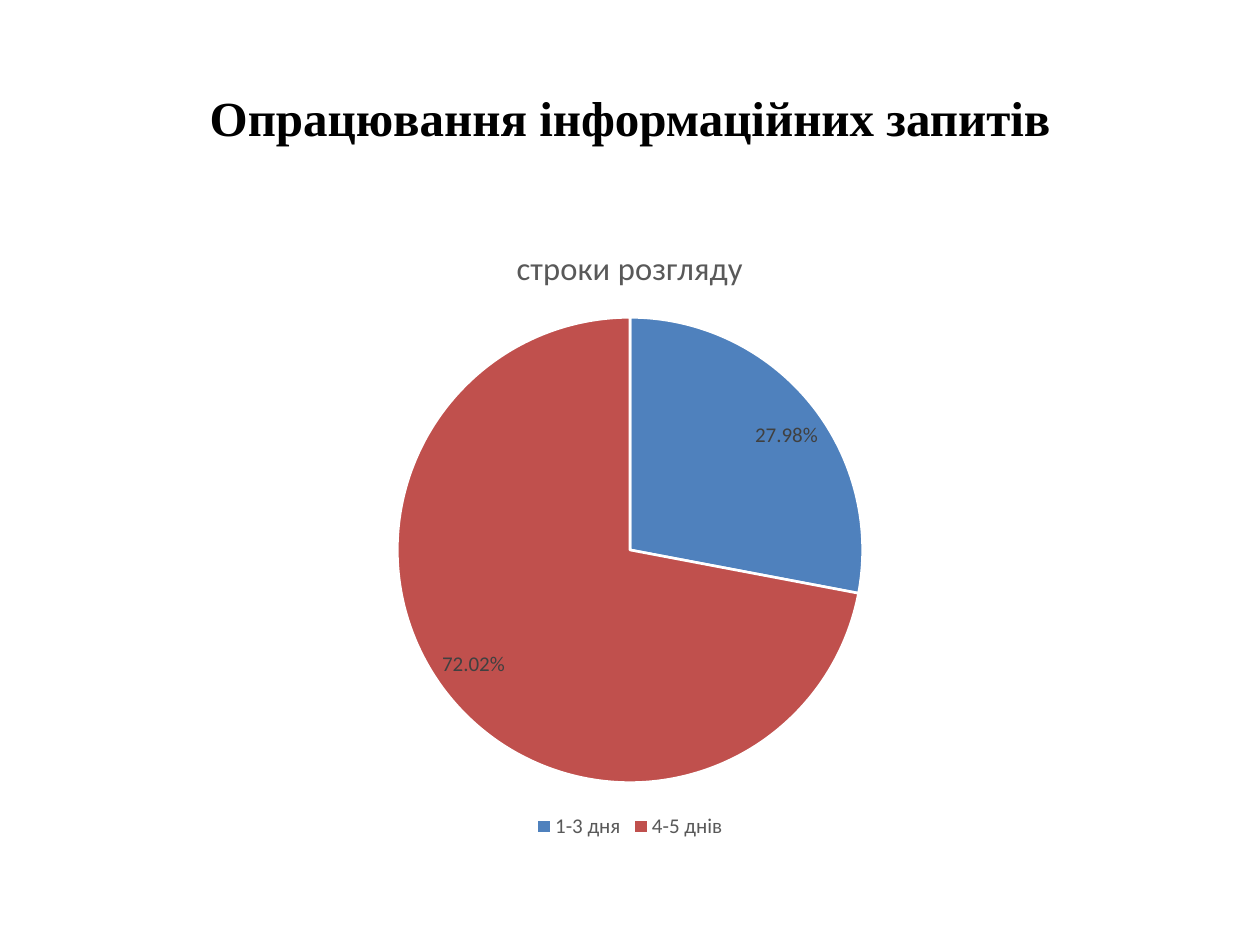
from pptx import Presentation
from pptx import util as u
from pptx.chart.data import CategoryChartData
from pptx.dml.color import RGBColor
from pptx.enum import chart as ch, text

HUES = {"ink": "000000", "grey": "595959", "dark": "404040",
        "blue": "4F81BD", "red": "C0504D", "white": "FFFFFF"}


class Deck:
    def __init__(self):
        self.prs = Presentation()
        self.prs.slide_width = u.Inches(10)
        self.prs.slide_height = u.Inches(7.5)
        self.slide = self.prs.slides.add_slide(self.prs.slide_layouts[5])

    def hue(self, name):
        return RGBColor.from_string(HUES[name])

    def style(self, font, size, hue, face="Calibri", bold=False):
        font.name, font.size, font.bold = face, u.Pt(size), bold
        font.color.rgb = self.hue(hue)

    def title(self, words, *box):
        head = self.slide.shapes.title
        head.left, head.top, head.width, head.height = map(u.Inches, box)
        frame = head.text_frame
        frame.text = words
        frame.vertical_anchor = text.MSO_ANCHOR.MIDDLE
        line = frame.paragraphs[0]
        line.alignment = text.PP_ALIGN.CENTER
        self.style(line.runs[0].font, 28, "ink", "Times New Roman", True)

    def pie(self, name, shares, hues, *box):
        data = CategoryChartData(number_format="0.00%")
        data.categories = list(shares)
        data.add_series(name, list(shares.values()))
        chart = self.slide.shapes.add_chart(
            ch.XL_CHART_TYPE.PIE, *map(u.Inches, box), data).chart
        self.style(chart.font, 10, "ink")

        chart.has_title = True
        chart.chart_title.include_in_layout = False
        frame = chart.chart_title.text_frame
        frame.text = name
        self.style(frame.paragraphs[0].runs[0].font, 18.6, "grey")

        chart.has_legend = True
        chart.legend.position = ch.XL_LEGEND_POSITION.BOTTOM
        chart.legend.include_in_layout = False
        self.style(chart.legend.font, 12, "grey")

        plot = chart.plots[0]
        plot.vary_by_categories = True
        for i, hue in enumerate(hues):
            form = plot.series[0].points[i].format
            form.fill.solid()
            form.fill.fore_color.rgb = self.hue(hue)
            form.line.color.rgb = self.hue("white")
            form.line.width = u.Pt(1.5)

        tags = plot.series[0].data_labels
        tags.show_value = True
        tags.number_format = "0.00%"
        tags.number_format_is_linked = False
        tags.position = ch.XL_LABEL_POSITION.BEST_FIT
        self.style(tags.font, 12, "dark")


def main():
    deck = Deck()
    deck.title("Опрацювання інформаційних запитів", 0.5, 0.3, 9, 1.25)
    deck.pie("строки розгляду", {"1-3 дня": 0.2798, "4-5 днів": 0.7202},
             ("blue", "red"), 0.5, 1.75, 9, 4.95)
    deck.prs.save("out.pptx")


if __name__ == "__main__":
    main()
